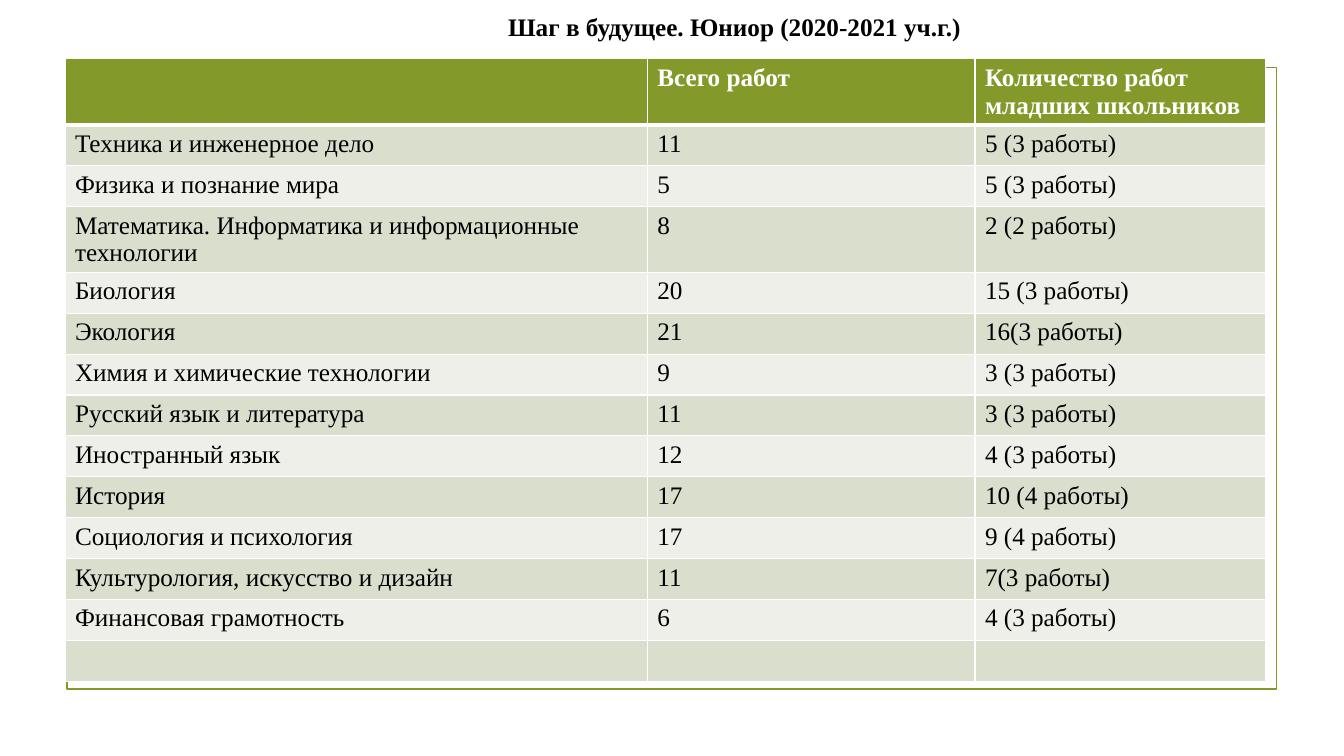
from lxml import etree
from pptx import Presentation
from pptx.dml.color import RGBColor
from pptx.enum.shapes import MSO_SHAPE
from pptx.enum.text import MSO_ANCHOR, MSO_AUTO_SIZE, PP_ALIGN
from pptx.oxml.ns import qn
from pptx.util import Pt

RECTANGLE = MSO_SHAPE.RECTANGLE
TOP, LEFT, NO_FIT = MSO_ANCHOR.TOP, PP_ALIGN.LEFT, MSO_AUTO_SIZE.NONE

TITLE = "Шаг в будущее. Юниор (2020-2021 уч.г.)"
ROWS = [
    ("", "Всего работ", "Количество работ младших школьников"),
    ("Техника и инженерное дело", "11", "5 (3 работы)"),
    ("Физика и познание мира", "5", "5 (3 работы)"),
    ("Математика. Информатика и информационные технологии", "8", "2 (2 работы)"),
    ("Биология", "20", "15 (3 работы)"),
    ("Экология", "21", "16(3 работы)"),
    ("Химия и химические технологии", "9", "3 (3 работы)"),
    ("Русский язык и литература", "11", "3 (3 работы)"),
    ("Иностранный язык", "12", "4 (3 работы)"),
    ("История", "17", "10 (4 работы)"),
    ("Социология и психология", "17", "9 (4 работы)"),
    ("Культурология, искусство и дизайн", "11", "7(3 работы)"),
    ("Финансовая грамотность", "6", "4 (3 работы)"),
    ("", "", ""),
]
COLUMN_WIDTHS = (416, 234, 207.4)
ROW_HEIGHT = 29.2
TABLE_LEFT, TABLE_TOP = 46.4, 42
FONT, FONT_SIZE = "Times New Roman", 18
GREEN, WHITE, BLACK = "83992A", "FFFFFF", "000000"
BANDS = ("EDEFE8", "D9DECD")


def color(value):
    return RGBColor.from_string(value)


def add_span(para, text, ink, bold):
    span = para.add_run()
    span.text = text
    span.font.name = FONT
    span.font.size = Pt(FONT_SIZE)
    span.font.bold = bold
    span.font.color.rgb = color(ink)


def set_borders(cell, top, bottom):
    """Draw white cell borders; the widths of top and bottom are in points."""
    properties = cell._tc.get_or_add_tcPr()
    sides = (("a:lnL", 1), ("a:lnR", 1), ("a:lnT", top), ("a:lnB", bottom))
    for position, (tag, width) in enumerate(sides):
        line = etree.Element(qn(tag), w=str(Pt(width)))
        fill = etree.SubElement(line, qn("a:solidFill"))
        etree.SubElement(fill, qn("a:srgbClr"), val=WHITE)
        properties.insert(position, line)


def add_title(page):
    box = page.shapes.title
    box.left, box.top, box.width, box.height = Pt(355.7), Pt(4.3), Pt(340.6), Pt(29)
    frame = box.text_frame
    frame.word_wrap = False
    frame.auto_size = NO_FIT
    frame.vertical_anchor = TOP
    para = frame.paragraphs[0]
    para.alignment = LEFT
    add_span(para, TITLE, BLACK, True)


def add_border(page):
    border = page.shapes.add_shape(RECTANGLE, Pt(47.8), Pt(48.2), Pt(864), Pt(444.2))
    border.shadow.inherit = False
    border.fill.background()
    border.line.color.rgb = color(GREEN)
    border.line.width = Pt(1.25)


def add_results(page):
    table = page.shapes.add_table(
        len(ROWS), len(COLUMN_WIDTHS), Pt(TABLE_LEFT), Pt(TABLE_TOP),
        Pt(sum(COLUMN_WIDTHS)), Pt(ROW_HEIGHT * len(ROWS))).table
    for column, width in zip(table.columns, COLUMN_WIDTHS):
        column.width = Pt(width)
    for r, texts in enumerate(ROWS):
        table.rows[r].height = Pt(ROW_HEIGHT)
        header = r == 0
        for c, text in enumerate(texts):
            cell = table.cell(r, c)
            cell.fill.solid()
            cell.fill.fore_color.rgb = color(GREEN if header else BANDS[r % 2])
            set_borders(cell, 3 if r == 1 else 1, 3 if header else 1)
            if text:
                add_span(cell.text_frame.paragraphs[0], text,
                         WHITE if header else BLACK, header)


def main():
    deck = Presentation()
    deck.slide_width, deck.slide_height = Pt(960), Pt(540)
    page = deck.slides.add_slide(deck.slide_layouts[5])
    add_title(page)
    add_border(page)
    add_results(page)
    deck.save("out.pptx")


if __name__ == "__main__":
    main()
